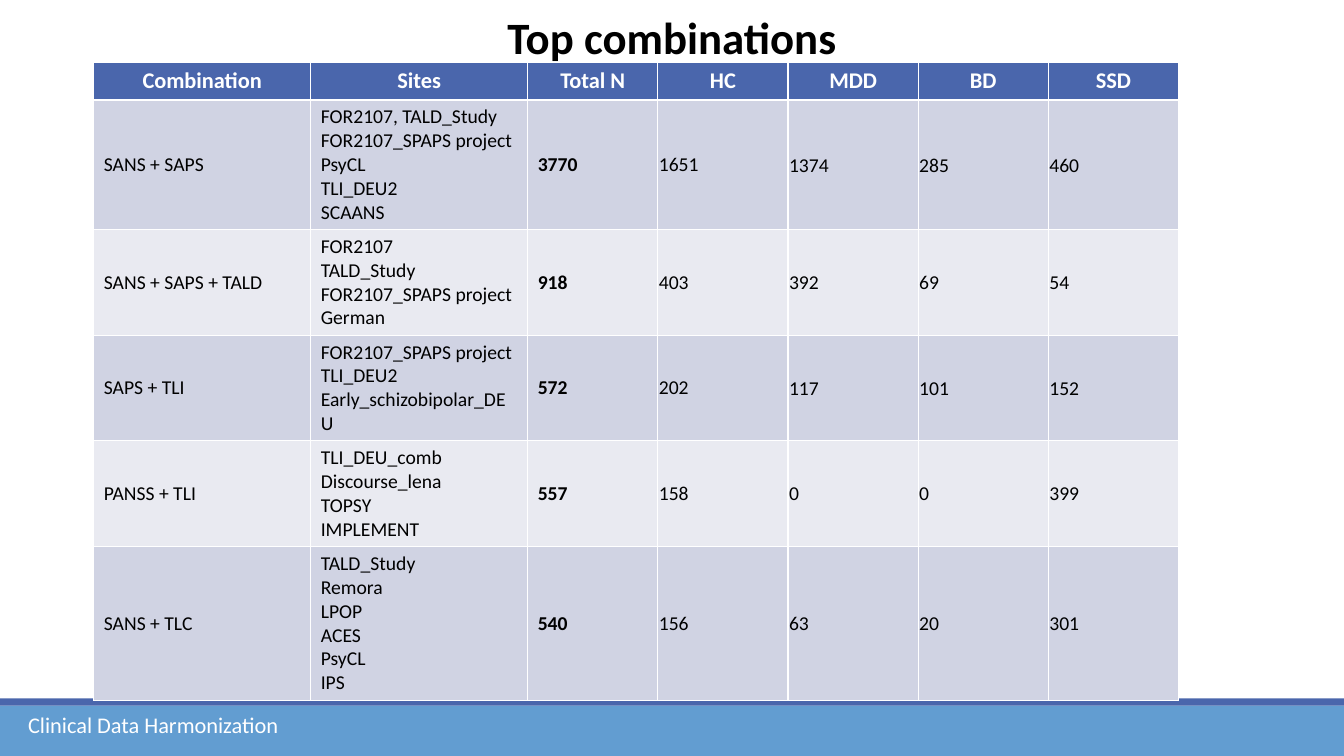
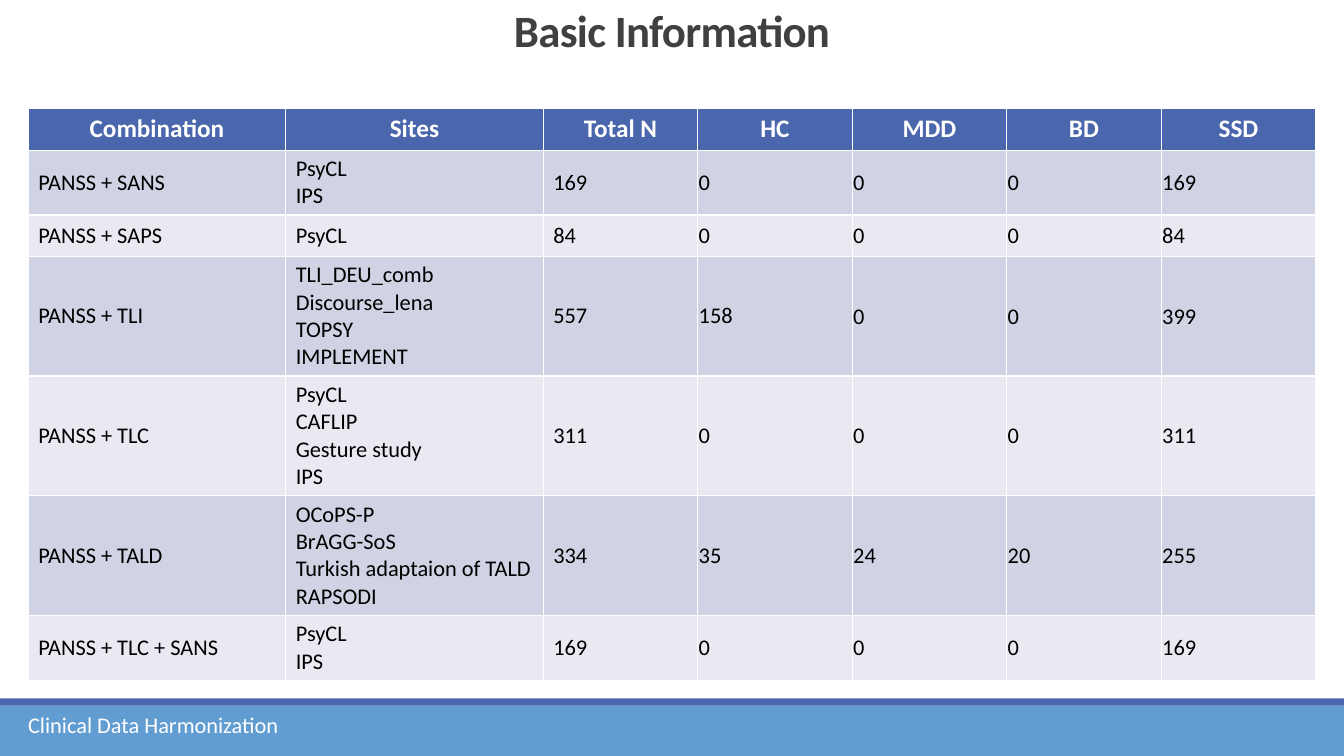
from pptx import Presentation
from pptx.dml.color import RGBColor
from pptx.enum.shapes import MSO_SHAPE
from pptx.enum.text import MSO_ANCHOR, MSO_AUTO_SIZE, PP_ALIGN
from pptx.util import Inches, Pt

FONT = "Calibri"
WHITE, BLACK, GRAY = "FFFFFF", "000000", "404040"
NAVY, SKY = "4A66AC", "629DD1"
ROW_FILLS = ("D0D3E3", "E9EAF1")
SLIDE_WIDTH, SLIDE_HEIGHT = 13.33, 7.5
BANDS = [(7, 0.5, SKY), (6.93, 0.07, NAVY)]
FOOTER = "Clinical Data Harmonization"
HEADERS = ("Combination", "Sites", "Total N", "HC", "MDD", "BD", "SSD")
COLUMN_SHARES = (5, 5, 3, 3, 3, 3, 3)
LINE_SPACING = 1.22
CELL_PADDING = 0.1

SLIDES = [
    {
        "title": "Top combinations",
        "title_box": (0.05, 0.64),
        "title_color": BLACK,
        "title_anchor": MSO_ANCHOR.TOP,
        "title_line_spacing": 1,
        "title_tracking": 0,
        "table_box": (0.93, 0.62, 10.76),
        "header_size": 16,
        "body_size": 14,
        "minimum_height": 0.26,
        "bold_total": True,
        "rows": [
            ("SANS + SAPS",
             ["FOR2107, TALD_Study", "FOR2107_SPAPS project", "PsyCL", "TLI_DEU2", "SCAANS"],
             3770, 1651, 1374, 285, 460),
            ("SANS + SAPS + TALD",
             ["FOR2107", "TALD_Study", "FOR2107_SPAPS project", "German"],
             918, 403, 392, 69, 54),
            ("SAPS + TLI",
             ["FOR2107_SPAPS project", "TLI_DEU2", "Early_schizobipolar_DEU"],
             572, 202, 117, 101, 152),
            ("PANSS + TLI",
             ["TLI_DEU_comb", "Discourse_lena", "TOPSY", "IMPLEMENT"],
             557, 158, 0, 0, 399),
            ("SANS + TLC",
             ["TALD_Study", "Remora", "LPOP", "ACES", "PsyCL", "IPS"],
             540, 156, 63, 20, 301),
        ],
    },
    {
        "title": "Basic Information",
        "title_box": (0, 0.61),
        "title_color": GRAY,
        "title_anchor": MSO_ANCHOR.BOTTOM,
        "title_line_spacing": 0.85,
        "title_tracking": -50,
        "table_box": (0.28, 1.08, 12.77),
        "header_size": 18,
        "body_size": 16,
        "minimum_height": 0.41,
        "bold_total": False,
        "rows": [
            ("PANSS + SANS", ["PsyCL", "IPS"], 169, 0, 0, 0, 169),
            ("PANSS + SAPS", ["PsyCL"], 84, 0, 0, 0, 84),
            ("PANSS + TLI",
             ["TLI_DEU_comb", "Discourse_lena", "TOPSY", "IMPLEMENT"],
             557, 158, 0, 0, 399),
            ("PANSS + TLC",
             ["PsyCL", "CAFLIP", "Gesture study", "IPS"],
             311, 0, 0, 0, 311),
            ("PANSS + TALD",
             ["OCoPS-P", "BrAGG-SoS", "Turkish adaptaion of TALD", "RAPSODI"],
             334, 35, 24, 20, 255),
            ("PANSS + TLC + SANS", ["PsyCL", "IPS"], 169, 0, 0, 0, 169),
        ],
    },
]


def color(value):
    return RGBColor.from_string(value)


def format_text(text_frame, size, text_color, bold=False, alignment=PP_ALIGN.LEFT):
    for paragraph in text_frame.paragraphs:
        paragraph.alignment = alignment
        for run in paragraph.runs:
            run.font.name = FONT
            run.font.size = Pt(size)
            run.font.bold = bold
            run.font.color.rgb = color(text_color)


def add_layout_bands(slide):
    for top, height, fill in BANDS:
        band = slide.shapes.add_shape(
            MSO_SHAPE.RECTANGLE, 0, Inches(top), Inches(SLIDE_WIDTH), Inches(height))
        band.shadow.inherit = False
        band.fill.solid()
        band.fill.fore_color.rgb = color(fill)
        band.line.fill.background()
        slide.slide_layout.shapes.element.append(band.element)


def set_title(slide, content):
    title = slide.shapes.title
    top, height = content["title_box"]
    title.left, title.top = 0, Inches(top)
    title.width, title.height = Inches(SLIDE_WIDTH), Inches(height)
    text_frame = title.text_frame
    text_frame.text = content["title"]
    text_frame.auto_size = MSO_AUTO_SIZE.NONE
    text_frame.vertical_anchor = content["title_anchor"]
    format_text(text_frame, 32, content["title_color"], True, PP_ALIGN.CENTER)
    paragraph = text_frame.paragraphs[0]
    paragraph.line_spacing = content["title_line_spacing"]
    paragraph.runs[0]._r.get_or_add_rPr().set("spc", str(content["title_tracking"]))


def row_height(line_count, size, minimum):
    return max(minimum, line_count * size * LINE_SPACING / 72 + CELL_PADDING)


def fill_cell(cell, text, fill):
    cell.text_frame.text = text
    cell.fill.solid()
    cell.fill.fore_color.rgb = color(fill)


def tighten_margins(cell, column):
    top, bottom = (0.02, 0.02) if column == 3 else (0.01, 0)
    cell.margin_left = cell.margin_right = Inches(0.01)
    cell.margin_top, cell.margin_bottom = Inches(top), Inches(bottom)


def add_combination_table(slide, content):
    rows, minimum = content["rows"], content["minimum_height"]
    heights = [row_height(1, content["header_size"], minimum)]
    heights += [row_height(len(row[1]), content["body_size"], minimum) for row in rows]
    left, top, width = content["table_box"]
    table = slide.shapes.add_table(
        len(heights), len(HEADERS), Inches(left), Inches(top),
        Inches(width), Inches(sum(heights))).table
    for column, share in zip(table.columns, COLUMN_SHARES):
        column.width = Inches(width * share / sum(COLUMN_SHARES))
    for table_row, height in zip(table.rows, heights):
        table_row.height = Inches(height)

    for column, header in enumerate(HEADERS):
        cell = table.cell(0, column)
        fill_cell(cell, header, NAVY)
        format_text(cell.text_frame, content["header_size"], WHITE, True, PP_ALIGN.CENTER)

    for row_index, (combination, sites, *counts) in enumerate(rows):
        texts = [combination, "\n".join(sites), *map(str, counts)]
        for column, text in enumerate(texts):
            cell = table.cell(row_index + 1, column)
            fill_cell(cell, text, ROW_FILLS[row_index % 2])
            cell.vertical_anchor = MSO_ANCHOR.MIDDLE
            bold = content["bold_total"] and column == 2
            format_text(cell.text_frame, content["body_size"], BLACK, bold)
            if column > 2:
                tighten_margins(cell, column)


def add_footer(slide):
    footer = slide.shapes.add_textbox(Inches(0.18), Inches(7.01), Inches(7.35), Inches(0.4))
    footer.text_frame.word_wrap = True
    footer.text_frame.text = FOOTER
    format_text(footer.text_frame, 16, WHITE)


def main():
    presentation = Presentation()
    presentation.slide_width = Inches(SLIDE_WIDTH)
    presentation.slide_height = Inches(SLIDE_HEIGHT)
    layout = presentation.slide_layouts.get_by_name("Title Only")
    for index, content in enumerate(SLIDES):
        slide = presentation.slides.add_slide(layout)
        if index == 0:
            add_layout_bands(slide)
        set_title(slide, content)
        add_combination_table(slide, content)
        add_footer(slide)
    presentation.save("out.pptx")


if __name__ == "__main__":
    main()
